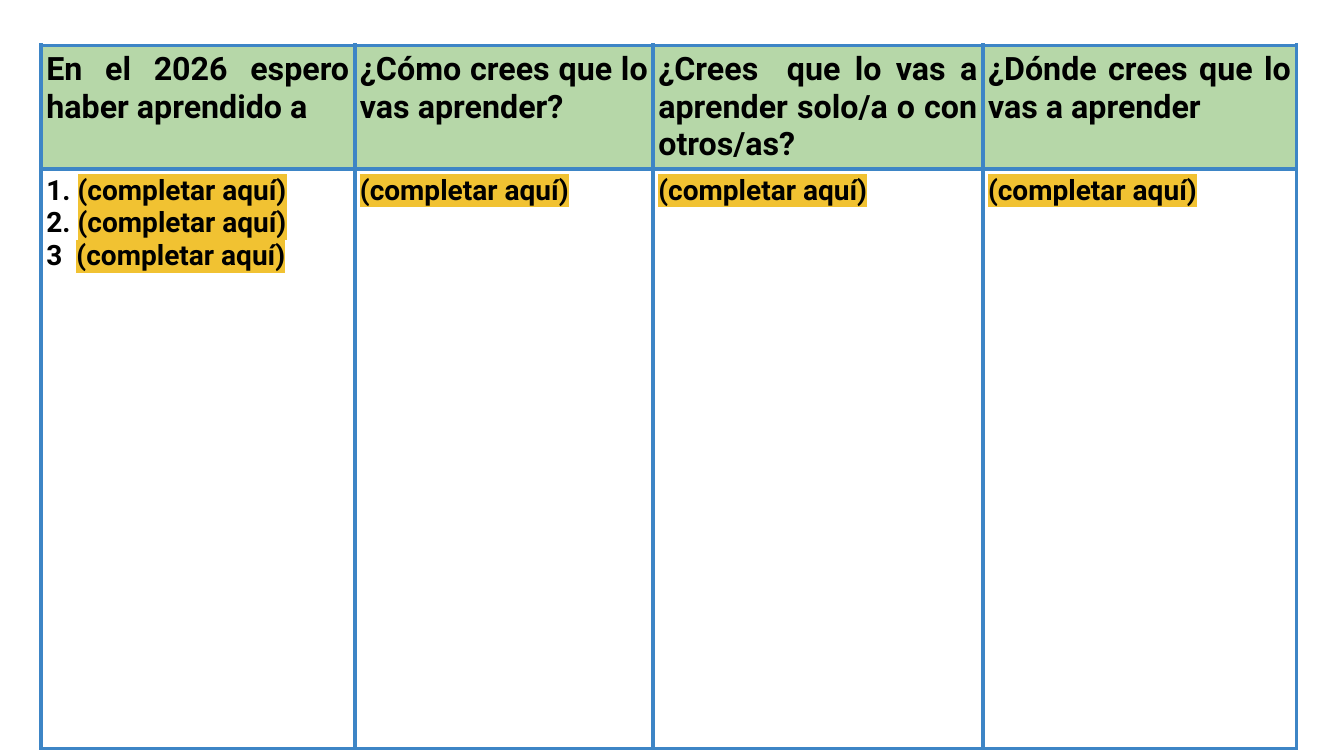
from lxml import etree
from pptx import Presentation
from pptx.dml.color import RGBColor
from pptx.enum import text
from pptx.oxml.ns import qn
from pptx.util import Inches, Pt

FONT = "Roboto"
BLACK, BLUE, GREEN, YELLOW = "000000", "3D85C6", "B6D7A8", "F1C232"
COLUMN_WIDTHS = [3.11, 2.96, 3.27, 3.11]
ROW_HEIGHTS = [1.03, 5.75]
QUESTIONS = [
    "En el 2026 espero haber aprendido a",
    "¿Cómo crees que lo vas aprender?",
    "¿Crees  que lo vas a aprender solo/a o con otros/as?",
    "¿Dónde crees que lo vas a aprender",
]
BLANK = "(completar aquí)"
# Prefixes of the blanks to fill in, one list per column
ANSWERS = [["1. ", "2. ", "3  "], [""], [""], [""]]


def rgb(color):
    return RGBColor.from_string(color)


def add_color(parent, tag, color):
    el = etree.SubElement(parent, qn(tag))
    etree.SubElement(el, qn("a:srgbClr"), val=color)
    return el


def border_cell(cell, color, width):
    tc_pr = cell._tc.get_or_add_tcPr()
    for i, side in enumerate(("a:lnL", "a:lnR", "a:lnT", "a:lnB")):
        ln = etree.Element(qn(side), w=str(Pt(width)))
        add_color(ln, "a:solidFill", color)
        tc_pr.insert(i, ln)


def style_cell(cell, fill=None):
    cell.margin_left = cell.margin_right = Inches(0.05)
    cell.margin_top = cell.margin_bottom = Inches(0.05)
    if fill:
        cell.fill.solid()
        cell.fill.fore_color.rgb = rgb(fill)
    else:
        cell.fill.background()
    border_cell(cell, BLUE, 3)


def style_paragraph(p, size):
    p.alignment = text.PP_ALIGN.JUSTIFY
    p.font.name = FONT
    p.font.size = Pt(size)
    p.font.bold = True
    p.font.color.rgb = rgb(BLACK)


def fill_answer(tf, prefixes):
    for i, prefix in enumerate(prefixes):
        p = tf.paragraphs[0] if i == 0 else tf.add_paragraph()
        if prefix:
            p.add_run().text = prefix
        r = p.add_run()
        r.text = BLANK
        add_color(r._r.get_or_add_rPr(), "a:highlight", YELLOW)
        style_paragraph(p, 20)


def add_learning_table(slide, left, top):
    table = slide.shapes.add_table(
        len(ROW_HEIGHTS), len(COLUMN_WIDTHS), Inches(left), Inches(top),
        Inches(sum(COLUMN_WIDTHS)), Inches(sum(ROW_HEIGHTS))).table
    table.horz_banding = False
    for column, width in zip(table.columns, COLUMN_WIDTHS):
        column.width = Inches(width)
    for row, height in zip(table.rows, ROW_HEIGHTS):
        row.height = Inches(height)
    for col, (question, prefixes) in enumerate(zip(QUESTIONS, ANSWERS)):
        header, answer = table.cell(0, col), table.cell(1, col)
        style_cell(header, GREEN)
        p = header.text_frame.paragraphs[0]
        p.add_run().text = question
        style_paragraph(p, 23)
        style_cell(answer)
        fill_answer(answer.text_frame, prefixes)


def main():
    prs = Presentation()
    prs.slide_width, prs.slide_height = Inches(13.33), Inches(7.5)
    slide = prs.slides.add_slide(prs.slide_layouts[6])
    add_learning_table(slide, 0.41, 0.45)
    prs.save("out.pptx")


if __name__ == "__main__":
    main()
